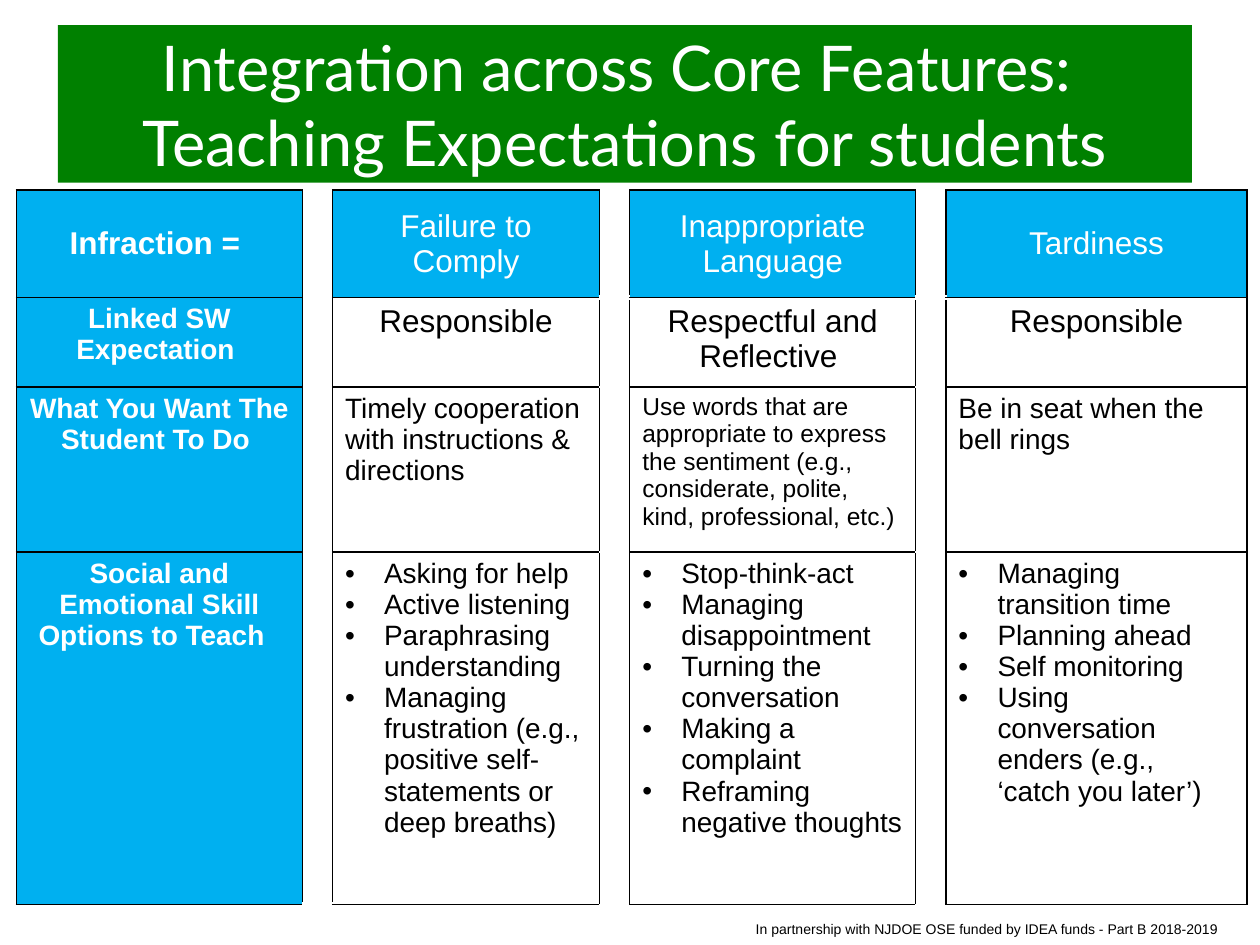
"""Build the slide on teaching expectations across core features."""
from dataclasses import dataclass

import lxml.etree
import pptx
import pptx.dml.color
import pptx.enum.text
import pptx.oxml
import pptx.oxml.ns
import pptx.slide
import pptx.table
import pptx.text.text
import pptx.util

Inches = pptx.util.Inches
ALIGN = pptx.enum.text.PP_ALIGN
ANCHOR = pptx.enum.text.MSO_ANCHOR


@dataclass(frozen=True)
class Theme:
    """Colours, fonts and type sizes of the slide."""

    title_fill: str = "008000"
    label_fill: str = "00B0F0"
    light: str = "FFFFFF"
    dark: str = "000000"
    title_font: str = "Lato"
    body_font: str = "Arial"
    title_size: float = 36
    heading_size: float = 18
    body_size: float = 16
    compact_size: float = 14
    footer_size: float = 8


@dataclass(frozen=True)
class Entry:
    """One table cell: its paragraphs and how they are set."""

    lines: tuple[str, ...]
    size: float
    label: bool = False
    bold: bool = False
    centered: bool = False
    bulleted: bool = False
    middle: bool = False


THEME = Theme()
COLUMN_WIDTHS = (2.27, 0.23, 2.12, 0.23, 2.27, 0.23, 2.39)
ROW_HEIGHTS = (0.85, 0.71, 1.31, 2.8)


def row_label(text: str, size: float = THEME.body_size, middle: bool = False) -> Entry:
    """Return a bold label for the first column."""
    return Entry((text,), size, label=True, bold=True, centered=True, middle=middle)


def heading(text: str) -> Entry:
    """Return a column heading."""
    return Entry((text,), THEME.heading_size, label=True, centered=True, middle=True)


def expectation(text: str) -> Entry:
    """Return a centred school-wide expectation."""
    return Entry((text,), THEME.heading_size, centered=True)


def behavior(text: str, size: float = THEME.body_size) -> Entry:
    """Return a description of the wanted behaviour."""
    return Entry((text,), size)


def skills(*lines: str) -> Entry:
    """Return a bulleted list of skills."""
    return Entry(lines, THEME.body_size, bulleted=True)


ROWS = (
    (
        row_label("Infraction = ", THEME.heading_size, middle=True),
        heading("Failure to Comply"),
        heading("Inappropriate Language"),
        heading("Tardiness"),
    ),
    (
        row_label("Linked SW Expectation "),
        expectation("Responsible"),
        expectation("Respectful and Reflective "),
        expectation("Responsible"),
    ),
    (
        row_label("What You Want The Student To Do "),
        behavior("Timely cooperation with instructions & directions"),
        behavior(
            "Use words that are appropriate to express the sentiment "
            "(e.g., considerate, polite, kind, professional, etc.)",
            THEME.compact_size,
        ),
        behavior("Be in seat when the bell rings"),
    ),
    (
        row_label("Social and Emotional Skill Options to Teach  "),
        skills(
            "Asking for help",
            "Active listening",
            "Paraphrasing understanding",
            "Managing frustration (e.g., positive self-statements or deep breaths)",
        ),
        skills(
            "Stop-think-act",
            "Managing disappointment",
            "Turning the conversation",
            "Making a complaint",
            "Reframing negative thoughts",
        ),
        skills(
            "Managing transition time",
            "Planning ahead",
            "Self monitoring",
            "Using conversation enders (e.g., ‘catch you later’)",
        ),
    ),
)


def rgb(color: str) -> pptx.dml.color.RGBColor:
    """Return a colour object for a hex string."""
    return pptx.dml.color.RGBColor.from_string(color)


def format_paragraph(paragraph: pptx.text.text._Paragraph, font: str, size: float,
                     color: str, bold: bool, centered: bool) -> None:
    """Set the alignment of a paragraph and the font of its runs."""
    paragraph.alignment = ALIGN.CENTER if centered else ALIGN.LEFT
    for run in paragraph.runs:
        run.font.name = font
        run.font.size = pptx.util.Pt(size)
        run.font.bold = bold
        run.font.color.rgb = rgb(color)


def add_bullet(paragraph: pptx.text.text._Paragraph) -> None:
    """Give a paragraph a hanging bullet."""
    properties = paragraph._p.get_or_add_pPr()
    properties.set("marL", str(Inches(0.31)))
    properties.set("indent", str(Inches(-0.31)))
    font = lxml.etree.SubElement(properties, pptx.oxml.ns.qn("a:buFont"))
    font.set("typeface", THEME.body_font)
    bullet = lxml.etree.SubElement(properties, pptx.oxml.ns.qn("a:buChar"))
    bullet.set("char", "•")


def set_borders(cell: pptx.table._Cell, edge_color: str, bottom_width: float = 1) -> None:
    """Draw black sides and top and bottom edges of the given colour."""
    properties = cell._tc.get_or_add_tcPr()
    for side, color, width in (("L", THEME.dark, 1), ("R", THEME.dark, 1),
                               ("T", edge_color, 1), ("B", edge_color, bottom_width)):
        properties.append(pptx.oxml.parse_xml(
            f'<a:ln{side} {pptx.oxml.ns.nsdecls("a")} w="{pptx.util.Pt(width)}">'
            f'<a:solidFill><a:srgbClr val="{color}"/></a:solidFill></a:ln{side}>'
        ))


def fill_cell(cell: pptx.table._Cell, entry: Entry) -> None:
    """Write and format one entry of the table."""
    set_borders(cell, THEME.dark)
    if entry.label:
        cell.fill.solid()
        cell.fill.fore_color.rgb = rgb(THEME.label_fill)
    else:
        cell.fill.background()
    cell.vertical_anchor = ANCHOR.MIDDLE if entry.middle else ANCHOR.TOP
    cell.text_frame.text = "\n".join(entry.lines)
    color = THEME.light if entry.label else THEME.dark
    for paragraph in cell.text_frame.paragraphs:
        if entry.bulleted:
            add_bullet(paragraph)
        format_paragraph(paragraph, THEME.body_font, entry.size, color,
                         entry.bold, entry.centered)


def add_matrix(slide: pptx.slide.Slide) -> None:
    """Add the table of infractions with narrow spacer columns."""
    table = slide.shapes.add_table(
        len(ROW_HEIGHTS), len(COLUMN_WIDTHS), Inches(0.13), Inches(1.51),
        Inches(sum(COLUMN_WIDTHS)), Inches(sum(ROW_HEIGHTS))).table
    table.first_row = table.horz_banding = False
    for column, width in zip(table.columns, COLUMN_WIDTHS):
        column.width = Inches(width)
    for row_index, (height, entries) in enumerate(zip(ROW_HEIGHTS, ROWS)):
        table.rows[row_index].height = Inches(height)
        for entry_index, entry in enumerate(entries):
            fill_cell(table.cell(row_index, 2 * entry_index), entry)
        for spacer_index in range(1, len(COLUMN_WIDTHS), 2):
            spacer = table.cell(row_index, spacer_index)
            set_borders(spacer, THEME.light, 1 if row_index else 3)
            spacer.fill.background()
    table.cell(0, 1).merge(table.cell(len(ROW_HEIGHTS) - 1, 1))


def add_footer(slide: pptx.slide.Slide) -> None:
    """Add the funding line."""
    footer = slide.shapes.add_textbox(Inches(5.67), Inches(7.26), Inches(4.33), Inches(0.23))
    frame = footer.text_frame
    frame.word_wrap = True
    frame.vertical_anchor = ANCHOR.MIDDLE
    frame.text = "In partnership with NJDOE OSE funded by IDEA funds - Part B 2018-2019"
    format_paragraph(frame.paragraphs[0], THEME.body_font, THEME.footer_size,
                     THEME.dark, False, True)


def set_title(slide: pptx.slide.Slide) -> None:
    """Place and format the title banner."""
    title = slide.shapes.title
    title.left, title.top = Inches(0.46), Inches(0.2)
    title.width, title.height = Inches(9), Inches(1.25)
    title.fill.solid()
    title.fill.fore_color.rgb = rgb(THEME.title_fill)
    frame = title.text_frame
    frame.auto_size = pptx.enum.text.MSO_AUTO_SIZE.NONE
    frame.vertical_anchor = ANCHOR.MIDDLE
    frame.text = "Integration across Core Features: \nTeaching Expectations for students"
    for paragraph in frame.paragraphs:
        format_paragraph(paragraph, THEME.title_font, THEME.title_size,
                         THEME.light, False, True)


def main() -> None:
    """Build and save the presentation."""
    presentation = pptx.Presentation()
    presentation.slide_width, presentation.slide_height = Inches(10), Inches(7.5)
    slide = presentation.slides.add_slide(presentation.slide_layouts[5])
    add_matrix(slide)
    add_footer(slide)
    set_title(slide)
    presentation.save("out.pptx")


if __name__ == "__main__":
    main()
